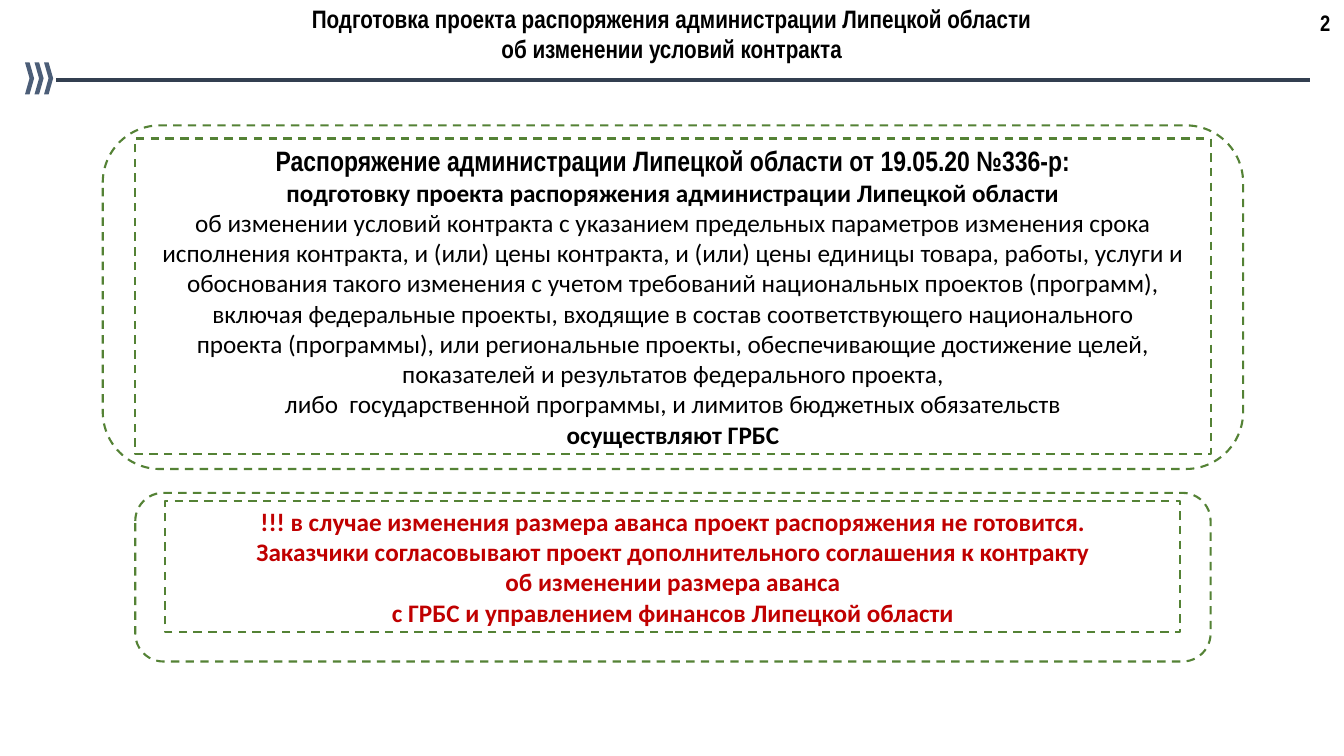
from lxml.etree import SubElement
from pptx import Presentation
from pptx.dml.color import RGBColor
from pptx.enum.dml import MSO_LINE_DASH_STYLE as Dash
from pptx.enum.shapes import MSO_CONNECTOR as Connector, MSO_SHAPE as Shape
from pptx.enum.text import MSO_ANCHOR as Anchor, MSO_AUTO_SIZE as AutoSize, PP_ALIGN as Align
from pptx.oxml.ns import qn
from pptx.util import Cm, Pt

COLORS = {
    "black": "000000",
    "white": "FFFFFF",
    "rule": "333F50",
    "chevron": "4C5E78",
    "border": "548235",
    "warning": "C00000",
}
NARROW, BODY = "Arial Narrow", "Calibri"

TITLE = [
    "Подготовка проекта распоряжения администрации Липецкой области",
    "об изменении условий контракта",
]

# Each paragraph: text, font, size, bold
ORDER = [
    ("Распоряжение администрации Липецкой области от 19.05.20 №336-р:", NARROW, 20, True),
    ("подготовку проекта распоряжения администрации Липецкой области", BODY, 18, True),
    ("об изменении условий контракта с указанием предельных параметров изменения срока "
     "исполнения контракта, и (или) цены контракта, и (или) цены единицы товара, работы, "
     "услуги и обоснования такого изменения с учетом требований национальных проектов "
     "(программ), включая федеральные проекты, входящие в состав соответствующего "
     "национального\vпроекта (программы), или региональные проекты, обеспечивающие "
     "достижение целей, показателей и результатов федерального проекта,", BODY, 18, False),
    ("либо  государственной программы, и лимитов бюджетных обязательств", BODY, 18, False),
    ("осуществляют ГРБС", BODY, 18, True),
]
WARNING = [
    (text, BODY, 18, True) for text in (
        "!!! в случае изменения размера аванса проект распоряжения не готовится.",
        "Заказчики согласовывают проект дополнительного соглашения к контракту",
        "об изменении размера аванса",
        "с ГРБС и управлением финансов Липецкой области",
    )
]


def color(name):
    return RGBColor.from_string(COLORS[name])


def write(frame, lines, ink="black", align=Align.CENTER):
    """Fill a text frame with formatted paragraphs."""
    frame.word_wrap = True
    frame.auto_size = AutoSize.NONE
    for index, (text, font, size, bold) in enumerate(lines):
        para = frame.paragraphs[0] if index == 0 else frame.add_paragraph()
        para.text = text
        para.alignment = align
        para.font.name = font
        para.font.size = Pt(size)
        para.font.bold = bold
        para.font.color.rgb = color(ink)


def add_title(page):
    title = page.shapes.title
    title.left, title.top, title.width, title.height = Cm(4.23), Cm(-0.05), Cm(25.4), Cm(2.57)
    title.text_frame.vertical_anchor = Anchor.TOP
    write(title.text_frame, [(line, NARROW, 18, True) for line in TITLE])


def add_page_number(page, number):
    box = page.shapes.add_textbox(Cm(33.02), Cm(0.1), Cm(0.76), Cm(0.92))
    write(box.text_frame, [(number, NARROW, 16, True)], align=Align.LEFT)
    box.text_frame.word_wrap = False


def add_rule(page):
    rule = page.shapes.add_connector(Connector.STRAIGHT, Cm(1.42), Cm(2.01), Cm(33.02), Cm(2.01))
    rule.line.color.rgb = color("rule")
    rule.line.width = Pt(2.75)
    SubElement(rule.element.spPr, qn("a:effectLst"))


def add_chevrons(page):
    for index in range(3):
        chevron = page.shapes.add_shape(
            Shape.CHEVRON, Cm(0.63 + 0.24 * index), Cm(1.57), Cm(0.23), Cm(0.81))
        chevron.shadow.inherit = False
        chevron.fill.solid()
        chevron.fill.fore_color.rgb = color("chevron")
        chevron.line.fill.background()


def add_dashed(shapes, kind, left, top, width, height):
    box = shapes.add_shape(kind, Cm(left), Cm(top), Cm(width), Cm(height))
    box.shadow.inherit = False
    box.line.color.rgb = color("border")
    box.line.width = Pt(1.5)
    box.line.dash_style = Dash.DASH
    return box


def add_panel(page, outer, inner, lines, ink):
    """Group a rounded frame with the text box inside it."""
    shapes = page.shapes.add_group_shape().shapes
    frame = add_dashed(shapes, Shape.ROUNDED_RECTANGLE, *outer)
    frame.fill.solid()
    frame.fill.fore_color.rgb = color("white")

    box = add_dashed(shapes, Shape.RECTANGLE, *inner)
    box.fill.background()
    text = box.text_frame
    text.vertical_anchor = Anchor.MIDDLE
    text.margin_left = text.margin_right = text.margin_top = text.margin_bottom = Cm(0.1)
    write(text, lines, ink)


def main():
    deck = Presentation()
    deck.slide_width, deck.slide_height = Cm(33.87), Cm(19.05)
    page = deck.slides.add_slide(deck.slide_layouts[5])

    # Header
    add_title(page)
    add_page_number(page, "2")
    add_rule(page)
    add_chevrons(page)

    # Panels
    add_panel(page, (2.59, 3.16, 28.74, 8.66), (3.41, 3.49, 27.1, 7.95), ORDER, "black")
    add_panel(page, (3.41, 12.42, 27.1, 4.25), (4.17, 12.63, 25.58, 3.3), WARNING, "warning")

    deck.save("out.pptx")


if __name__ == "__main__":
    main()
